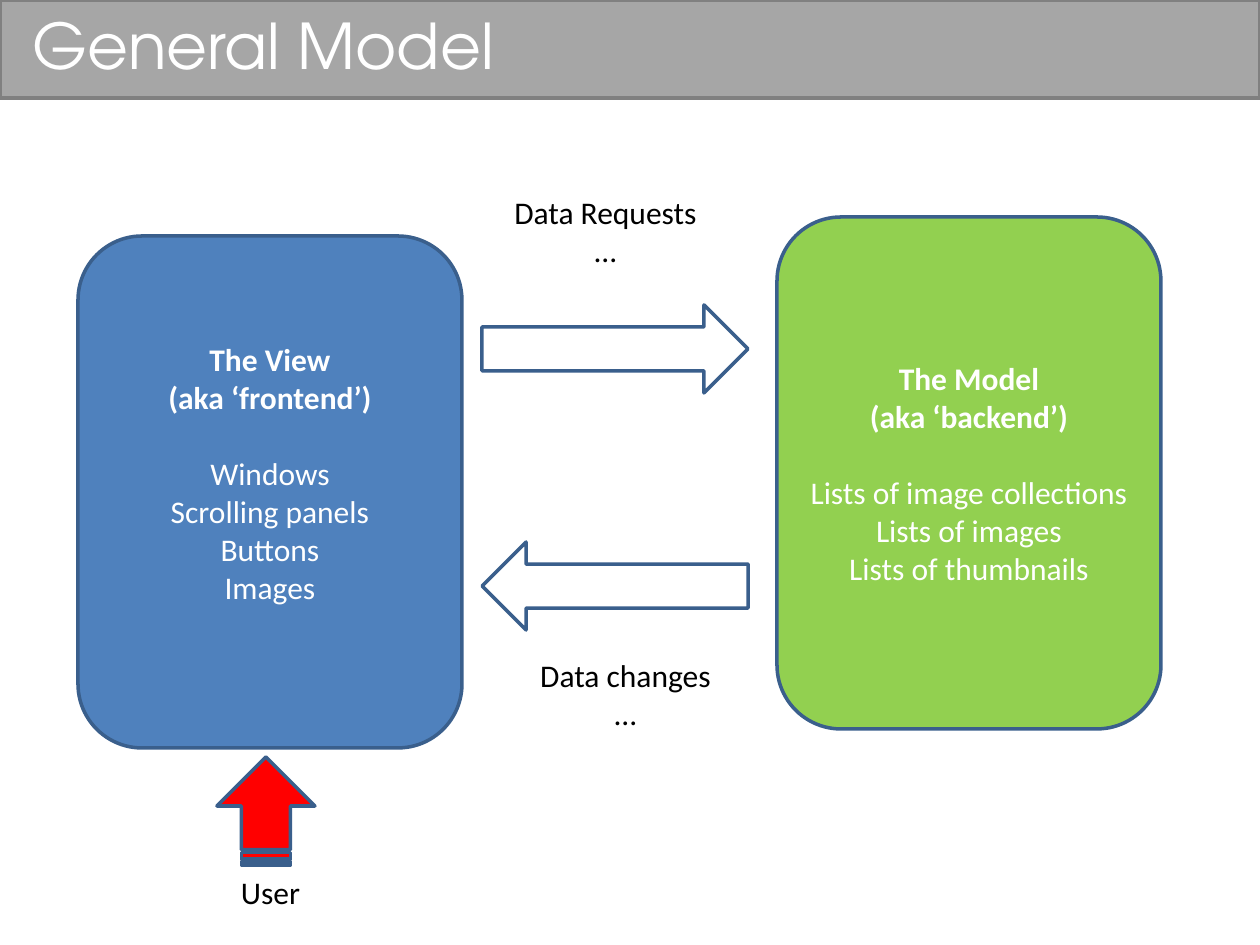
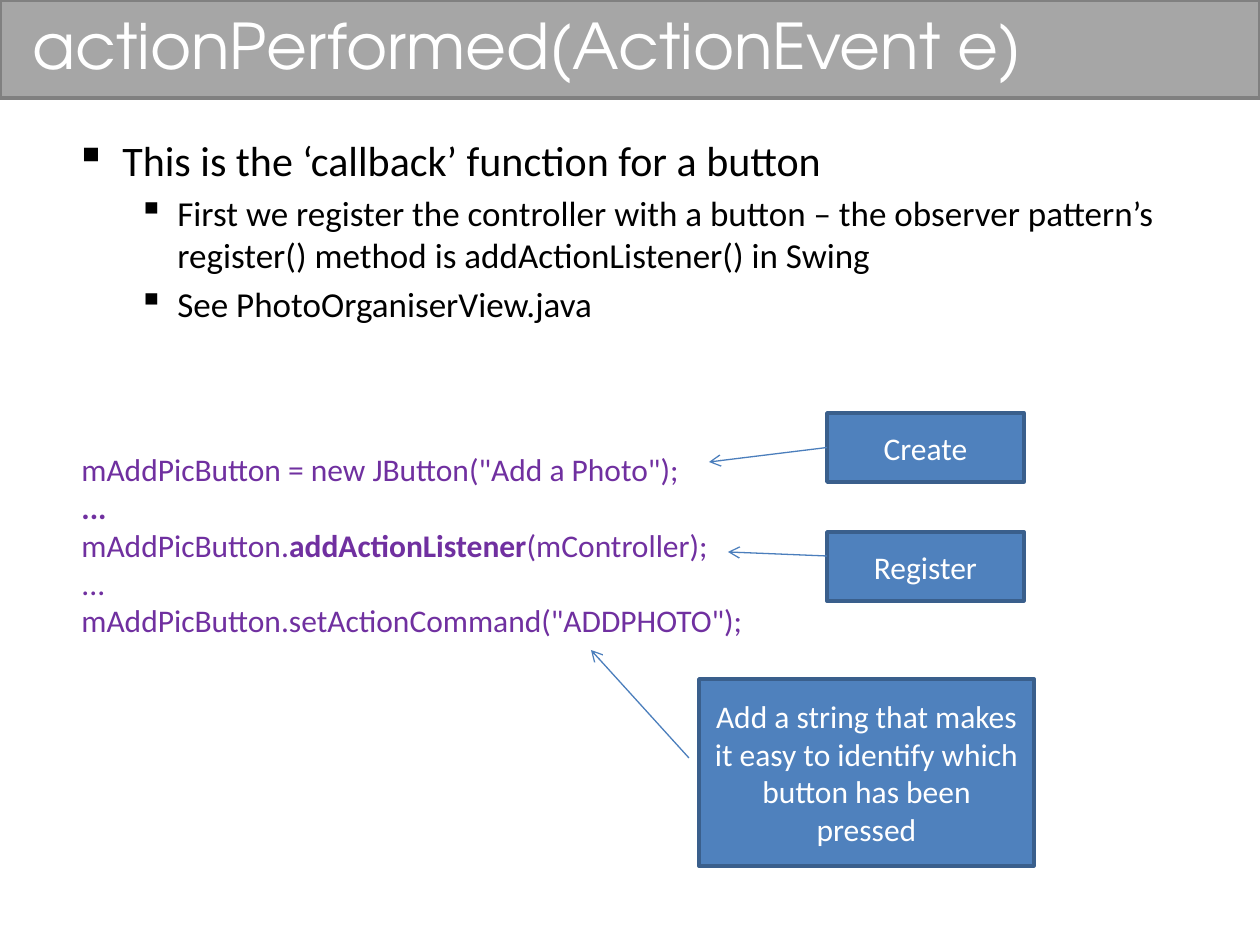
from lxml import etree
from pptx import Presentation
from pptx.dml.color import RGBColor
from pptx.enum.shapes import MSO_CONNECTOR, MSO_SHAPE
from pptx.enum.text import MSO_ANCHOR, PP_ALIGN
from pptx.oxml.ns import qn
from pptx.util import Emu, Pt

RECT, ROUNDED = MSO_SHAPE.RECTANGLE, MSO_SHAPE.ROUNDED_RECTANGLE
ARROW, STRIPED_ARROW = MSO_SHAPE.RIGHT_ARROW, MSO_SHAPE.STRIPED_RIGHT_ARROW
STRAIGHT = MSO_CONNECTOR.STRAIGHT
TOP, MIDDLE = MSO_ANCHOR.TOP, MSO_ANCHOR.MIDDLE
LEFT, CENTER = PP_ALIGN.LEFT, PP_ALIGN.CENTER
LEFT_SIDE = 1

PX_PER_INCH = 126
PAGE = (1260, 945)
BAND = (0, 0, 1260, 98)
TITLE = (20, 0, 1201, 88)
INSET_Y = 6
BODY_FONT, TITLE_FONT = "Calibri", "TeX Gyre Adventor"
WHITE, BLACK, PURPLE, RED = "FFFFFF", "000000", "7030A0", "FF0000"
BLUE, GREEN, OUTLINE, POINTER = "4F81BD", "92D050", "3A5F8C", "4B7EBC"
GREY, DARK_GREY = "A6A6A6", "808080"

# Slide 1: place, fill, extra bottom inset, heading lines, item lines
TIERS = [
    ((78, 236, 384, 512), BLUE, 38, ["The View", "(aka ‘frontend’)"],
     ["Windows", "Scrolling panels", "Buttons", "Images"]),
    ((777, 217, 384, 512), GREEN, 0, ["The Model", "(aka ‘backend’)"],
     ["Lists of image collections", "Lists of images", "Lists of thumbnails"]),
]
# Place before turning, shape, fill, rotation
FLOW_ARROWS = [
    ((482, 305, 266, 88), ARROW, WHITE, 0),
    ((482, 542, 266, 88), ARROW, WHITE, 180),
    ((212, 762, 108, 98), STRIPED_ARROW, RED, 270),
]
FLOW_LABELS = [
    ((492, 187, 227, 127), ["Data Requests", "..."]),
    ((512, 650, 227, 127), ["Data changes", "..."]),
    ((157, 867, 227, 50), ["User"]),
]

# Slide 2: bullets as (level, text)
BULLET_BOX = (63, 128, 1134, 250)
BULLETS = [
    (0, "This is the ‘callback’ function for a button"),
    (1, "First we register the controller with a button – the observer pattern’s "
        "register() method is addActionListener() in Swing"),
    (1, "See PhotoOrganiserView.java"),
]
BULLET_STYLES = [(24, 47, 47), (20, 102, 39)]  # size, margin, hanging indent
CODE_BOX = (69, 444, 709, 204)
CODE_LINES = [  # runs as (text, bold)
    [('mAddPicButton = new JButton("Add a Photo");', False)],
    [("...", True)],
    [("mAddPicButton.", False), ("addActionListener", True), ("(mController);", False)],
    [("...", False)],
    [('mAddPicButton.setActionCommand("ADDPHOTO");', False)],
]
# Place, text, pointer start, pointer end, joined to the left side
CALLOUTS = [
    ((827, 413, 197, 69), "Create", (827, 448), (709, 462), True),
    ((827, 532, 197, 69), "Register", (827, 556), (728, 552), False),
    ((699, 679, 335, 187), "Add a string that makes it easy to identify which "
     "button has been pressed", (689, 758), (591, 650), False),
]


def px(length):
    return Emu(round(length * 914400 / PX_PER_INCH))


def color(value):
    return RGBColor.from_string(value)


def add_block(page, place, kind, fill, line=OUTLINE, rotation=0):
    block = page.shapes.add_shape(kind, *map(px, place))
    block.shadow.inherit = False
    block.fill.solid()
    block.fill.fore_color.rgb = color(fill)
    block.line.color.rgb = color(line)
    block.line.width = Pt(2)
    block.rotation = rotation
    return block


def write(box, lines, tone, size=18, font=BODY_FONT, align=CENTER, anchor=MIDDLE):
    """Fill a shape with lines, each a list of (text, bold) runs."""
    frame = box.text_frame
    frame.word_wrap = True
    frame.vertical_anchor = anchor
    for index, runs in enumerate(lines):
        para = frame.add_paragraph() if index else frame.paragraphs[0]
        para.alignment = align
        for text, bold in runs:
            span = para.add_run()
            span.text = text
            span.font.name = font
            span.font.size = Pt(size)
            span.font.bold = bold
            span.font.color.rgb = color(tone)
    return frame


def plain(lines, bold=False):
    return [[(text, bold)] for text in lines]


def add_text(page, place, lines, tone, **style):
    box = page.shapes.add_textbox(*map(px, place))
    return write(box, lines, tone, **style)


def add_page(deck, title):
    page = deck.slides.add_slide(deck.slide_layouts[6])
    add_block(page, BAND, RECT, GREY, DARK_GREY)
    add_text(page, TITLE, plain([title]), WHITE, size=36, font=TITLE_FONT, align=LEFT)
    return page


def add_bullets(page):
    frame = add_text(page, BULLET_BOX, plain(text for _, text in BULLETS), BLACK,
                     align=LEFT, anchor=TOP)
    for para, (level, _) in zip(frame.paragraphs, BULLETS):
        size, margin, hanging = BULLET_STYLES[level]
        para.level = level
        para.space_before = Pt(size * 0.2)
        para.runs[0].font.size = Pt(size)
        properties = para._p.get_or_add_pPr()
        properties.set("marL", str(px(margin)))
        properties.set("indent", str(px(-hanging)))
        etree.SubElement(properties, qn("a:buChar")).set("char", "▪")


def add_pointer(page, start, end, source=None):
    pointer = page.shapes.add_connector(STRAIGHT, *map(px, start + end))
    if source is not None:
        pointer.begin_connect(source, LEFT_SIDE)
    pointer.line.color.rgb = color(POINTER)
    pointer.line.width = Pt(0.75)
    etree.SubElement(pointer.line._get_or_add_ln(), qn("a:tailEnd")).set("type", "arrow")
    etree.SubElement(pointer._element.spPr, qn("a:effectLst"))


def build_model_page(deck):
    page = add_page(deck, "General Model")
    for place, fill, lift, heading, items in TIERS:
        tier = add_block(page, place, ROUNDED, fill)
        frame = write(tier, plain(heading, True) + plain(items), WHITE)
        frame.paragraphs[len(heading)].space_before = Pt(22)
        frame.margin_bottom = px(INSET_Y + lift)
    for place, kind, fill, rotation in FLOW_ARROWS:
        add_block(page, place, kind, fill, rotation=rotation)
    for place, lines in FLOW_LABELS:
        add_text(page, place, plain(lines), BLACK, anchor=TOP)


def build_callback_page(deck):
    page = add_page(deck, "actionPerformed(ActionEvent e)")
    add_bullets(page)
    add_text(page, CODE_BOX, CODE_LINES, PURPLE, align=LEFT, anchor=TOP)
    for place, text, start, end, joined in CALLOUTS:
        callout = add_block(page, place, RECT, BLUE)
        write(callout, plain([text]), WHITE)
        add_pointer(page, start, end, callout if joined else None)


def main():
    deck = Presentation()
    deck.slide_width, deck.slide_height = map(px, PAGE)
    build_model_page(deck)
    build_callback_page(deck)
    deck.save("out.pptx")


if __name__ == "__main__":
    main()
